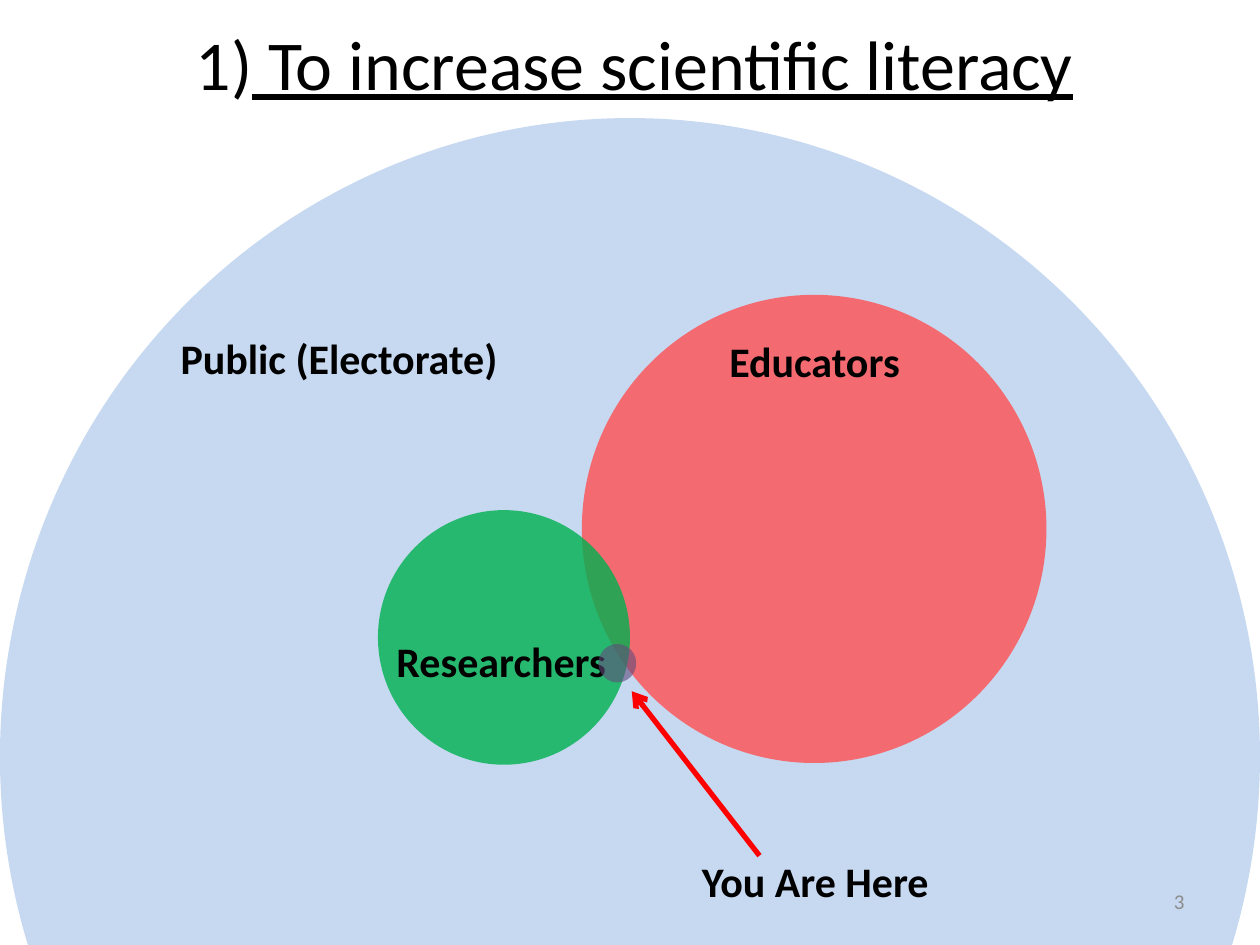
from dataclasses import dataclass

from lxml.etree import SubElement
from pptx import Presentation
from pptx.dml.color import RGBColor
from pptx.enum.shapes import MSO_CONNECTOR, MSO_SHAPE
from pptx.enum.text import MSO_ANCHOR, MSO_AUTO_SIZE, PP_ALIGN
from pptx.oxml.ns import qn
from pptx.util import Pt


@dataclass(frozen=True)
class Theme:
    font: str = "Calibri"
    title_size: int = 40
    label_size: int = 24
    number_size: int = 12
    text: str = "000000"
    muted: str = "8C8C8C"
    public: str = "C6D9F1"
    educators: str = "FF5050"
    researchers: str = "00B050"
    you: str = "604A7B"
    arrow: str = "FF0000"


def write_text(frame, text, *, font, size, color, bold=False, underline=False,
               align=PP_ALIGN.LEFT):
    """Fill the first paragraph of a frame and return it."""
    paragraph = frame.paragraphs[0]
    paragraph.alignment = align
    run = paragraph.add_run()
    run.text = text
    run.font.name = font
    run.font.size = Pt(size)
    run.font.bold = bold
    run.font.underline = underline
    run.font.color.rgb = RGBColor.from_string(color)
    return paragraph


class SlideBuilder:
    def __init__(self, slide, theme):
        self.slide = slide
        self.theme = theme

    def text(self, box, text, *, wrap=True, anchor=MSO_ANCHOR.TOP, grow=True, **style):
        shape = self.slide.shapes.add_textbox(*map(Pt, box))
        frame = shape.text_frame
        frame.word_wrap = wrap
        frame.vertical_anchor = anchor
        frame.auto_size = MSO_AUTO_SIZE.SHAPE_TO_FIT_TEXT if grow else MSO_AUTO_SIZE.NONE
        style = {"font": self.theme.font, "color": self.theme.text, **style}
        return write_text(frame, text, **style)

    def numbered_title(self, box, text):
        paragraph = self.text(box, text, size=self.theme.title_size, underline=True,
                              align=PP_ALIGN.CENTER)
        paragraph.level = 4
        properties = paragraph._p.get_or_add_pPr()
        properties.set("marL", str(Pt(32)))
        properties.set("indent", str(Pt(-27)))
        SubElement(properties, qn("a:buFont"), typeface="+mj-lt")
        SubElement(properties, qn("a:buAutoNum"), type="arabicParenR")

    def label(self, box, text, align=PP_ALIGN.LEFT):
        self.text(box, text, wrap=False, size=self.theme.label_size, bold=True, align=align)

    def circle(self, box, color, opacity=100):
        shape = self.slide.shapes.add_shape(MSO_SHAPE.OVAL, *map(Pt, box))
        shape.shadow.inherit = False
        shape.line.fill.background()
        shape.fill.solid()
        shape.fill.fore_color.rgb = RGBColor.from_string(color)
        if opacity < 100:
            color_element = shape._element.spPr.find(qn("a:solidFill"))[0]
            SubElement(color_element, qn("a:alpha"), val=str(opacity * 1000))

    def arrow(self, start, end, color, width):
        connector = self.slide.shapes.add_connector(
            MSO_CONNECTOR.STRAIGHT, *map(Pt, (*start, *end)))
        connector.line.color.rgb = RGBColor.from_string(color)
        connector.line.width = Pt(width)
        SubElement(connector.line._get_or_add_ln(), qn("a:tailEnd"), type="arrow")
        SubElement(connector._element.spPr, qn("a:effectLst"))


def main():
    presentation = Presentation()
    presentation.slide_width, presentation.slide_height = Pt(720), Pt(540)
    slide = presentation.slides.add_slide(presentation.slide_layouts[6])
    theme = Theme()
    builder = SlideBuilder(slide, theme)

    # Title
    builder.numbered_title((31, 8, 658, 55.5), " To increase scientific literacy")

    # Nested groups, from the widest to the narrowest
    builder.circle((0, 67.5, 720, 730), theme.public)
    builder.circle((332.5, 168.5, 265.5, 267.5), theme.educators, opacity=80)
    builder.label((95, 186.5, 197.5, 36), "Public (Electorate)", PP_ALIGN.CENTER)
    builder.label((409, 188, 113, 36), "Educators", PP_ALIGN.CENTER)
    builder.circle((216, 291.5, 144, 145.5), theme.researchers, opacity=80)
    builder.label((219.5, 359.5, 135.5, 36), "Researchers")

    # Where the audience stands
    builder.circle((342, 368, 21.6, 22), theme.you, opacity=60)
    builder.label((394, 485.5, 145.5, 36), "You Are Here")
    builder.arrow((434, 489), (361, 395), theme.arrow, 3)

    # Slide number
    builder.text((516, 500.5, 168, 28.75), "3", anchor=MSO_ANCHOR.MIDDLE, grow=False,
                 size=theme.number_size, color=theme.muted, align=PP_ALIGN.RIGHT)

    presentation.save("out.pptx")


if __name__ == "__main__":
    main()
